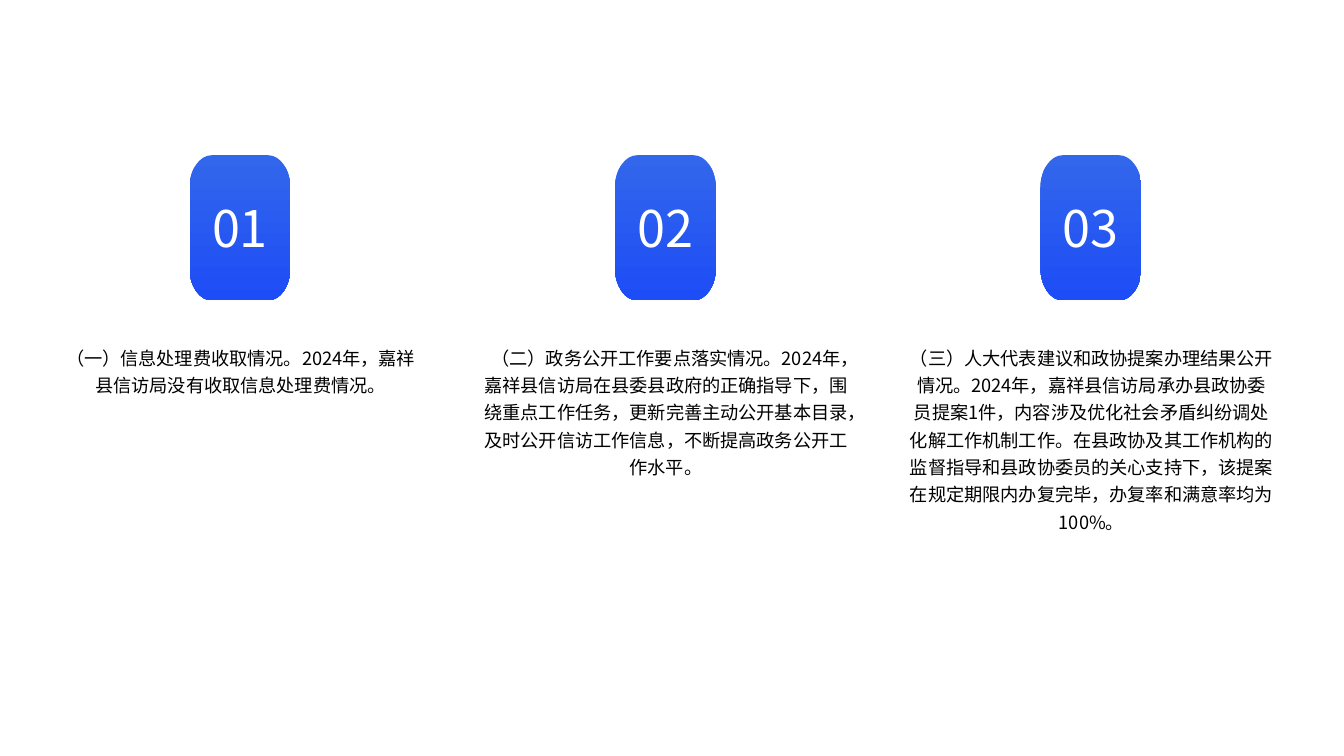
from lxml import etree
from pptx import Presentation
from pptx.dml.color import RGBColor
from pptx.enum.text import MSO_ANCHOR, PP_ALIGN
from pptx.oxml.ns import qn

CENTER = PP_ALIGN.CENTER
TOP = MSO_ANCHOR.TOP
MIDDLE = MSO_ANCHOR.MIDDLE
PX = 9144
PT = 12700
FONT = "Noto Sans CJK SC"
CURVE = 0.55

SECTIONS = [
    "（一）信息处理费收取情况。2024年，嘉祥县信访局没有收取信息处理费情况。",
    "（二）政务公开工作要点落实情况。2024年，嘉祥县信访局在县委县政府的正确指导下，"
    "围绕重点工作任务，更新完善主动公开基本目录，及时公开信访工作信息，"
    "不断提高政务公开工作水平。",
    "（三）人大代表建议和政协提案办理结果公开情况。2024年，嘉祥县信访局承办县政协委员提案1件，"
    "内容涉及优化社会矛盾纠纷调处化解工作机制工作。在县政协及其工作机构的监督指导和"
    "县政协委员的关心支持下，该提案在规定期限内办复完毕，办复率和满意率均为100%。",
]


def rgb(value):
    return RGBColor.from_string(value)


def add_text(slide, text, x, y, w, h, size, color="000000", spacing=1.25, anchor=TOP):
    box = slide.shapes.add_textbox(x * PX, y * PX, w * PX, h * PX)
    tf = box.text_frame
    tf.word_wrap = True
    tf.vertical_anchor = anchor
    tf.margin_left = tf.margin_right = tf.margin_top = tf.margin_bottom = 0
    p = tf.paragraphs[0]
    p.alignment = CENTER
    p.line_spacing = spacing
    r = p.add_run()
    r.text = text
    r.font.size = size * PT
    r.font.name = FONT
    r.font.color.rgb = rgb(color)
    etree.SubElement(r.font._element, qn("a:ea"), typeface=FONT)


def round_corner(line, start, corner, end):
    curve = etree.Element(qn("a:cubicBezTo"))
    controls = [[a + CURVE * (c - a) for a, c in zip(side, corner)] for side in (start, end)]
    for px, py in (*controls, end):
        etree.SubElement(curve, qn("a:pt"), x=str(round(px * PX)), y=str(round(py * PX)))
    line.getparent().replace(line, curve)


def add_badge(slide, number, x, y, w, h):
    rx, ry = 22, 32
    points = [(0, ry), (rx, 0), (w - rx, 0), (w, ry),
              (w, h - ry), (w - rx, h), (rx, h), (0, h - ry)]
    corners = [(0, 0), (w, 0), (w, h), (0, h)]
    builder = slide.shapes.build_freeform(*points[0], scale=PX)
    builder.add_line_segments(points[1:], close=True)
    sp = builder.convert_to_shape(x * PX, y * PX)
    lines = list(sp._element.iter(qn("a:lnTo")))
    for line, start, corner, end in zip(lines[::2], points[::2], corners, points[1::2]):
        for pt, value in zip(line.iter(qn("a:pt")), [end]):
            round_corner(line, start, corner, value)
    outline = next(sp._element.iter(qn("a:path")))
    outline.set("w", str(w * PX))
    outline.set("h", str(h * PX))
    for pt, (px, py) in zip(
            [node[-1] for node in outline if len(node)], points):
        pt.set("x", str(px * PX))
        pt.set("y", str(py * PX))
    sp.left, sp.top, sp.width, sp.height = x * PX, y * PX, w * PX, h * PX
    sp.shadow.inherit = False
    sp.line.fill.background()
    sp.fill.gradient()
    sp.fill.gradient_angle = 270
    for stop, color in zip(sp.fill.gradient_stops, ("3266EB", "1D4DF6")):
        stop.color.rgb = rgb(color)
    add_text(slide, number, x + 14, y + 21, w - 28, 95, size=36,
             color="FFFFFF", spacing=1.09, anchor=MIDDLE)


def add_section(slide, number, text, x, y, w, h):
    badge_w, badge_h, body_offset = 100, 144, 185
    add_badge(slide, number, x + (w - badge_w) // 2, y, badge_w, badge_h)
    add_text(slide, text, x, y + body_offset, w, h - body_offset, size=13)


def main():
    prs = Presentation()
    prs.slide_width = 1333 * PX
    prs.slide_height = 750 * PX
    slide = prs.slides.add_slide(prs.slide_layouts[6])
    left, pitch = 58, 422
    for i, text in enumerate(SECTIONS):
        add_section(slide, f"{i + 1:02d}", text, left + i * pitch, 154, 361, 474)
    prs.save("out.pptx")


if __name__ == "__main__":
    main()
